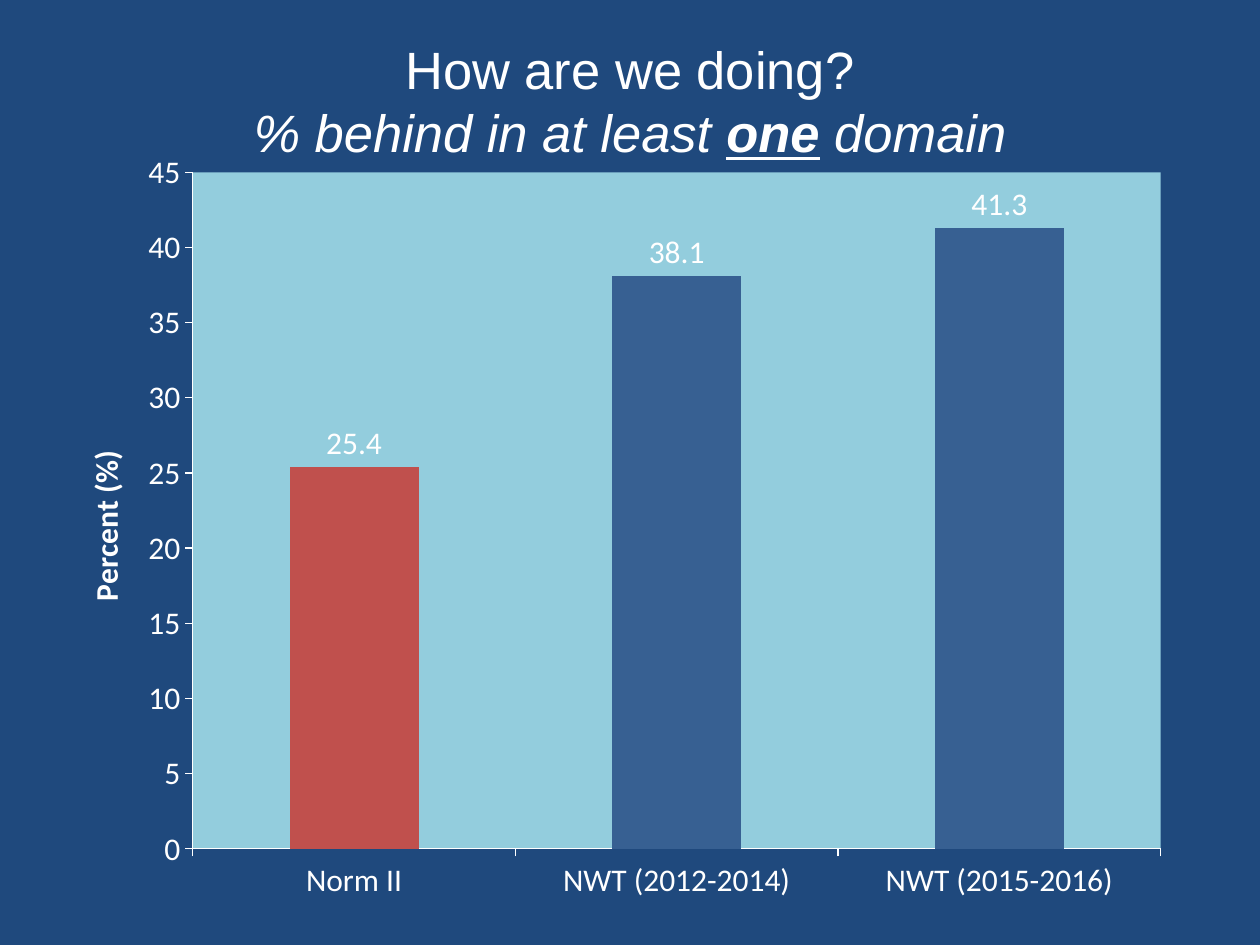
from lxml.etree import SubElement
from pptx import Presentation
from pptx.chart.data import CategoryChartData
from pptx.dml.color import RGBColor
from pptx.enum.chart import XL_CHART_TYPE, XL_LABEL_POSITION, XL_TICK_MARK
from pptx.enum.text import MSO_ANCHOR, MSO_AUTO_SIZE, PP_ALIGN
from pptx.oxml import parse_xml
from pptx.oxml.ns import nsdecls, qn
from pptx.util import Pt

NAVY = RGBColor(0x1F, 0x49, 0x7D)
WHITE = RGBColor(0xFF, 0xFF, 0xFF)
LIGHT_BLUE = RGBColor(0x93, 0xCD, 0xDD)
BLUE = RGBColor(0x4F, 0x81, 0xBD)
DARK_BLUE = RGBColor(0x37, 0x60, 0x92)
RED = RGBColor(0xC0, 0x50, 0x4D)


def apply(target, values):
    for name, value in values.items():
        setattr(target, name, value)


class SlideBuilder:
    """Holds the text style and the current slide."""

    title_font = {"name": "Arial", "size": Pt(30), "bold": False}
    chart_font = {"name": "Calibri", "size": Pt(18)}
    text_color = WHITE

    def __init__(self, presentation, background):
        self.slide = presentation.slides.add_slide(presentation.slide_layouts[5])
        fill = self.slide.background.fill
        fill.solid()
        fill.fore_color.rgb = background

    def style_font(self, font, values):
        apply(font, values)
        font.color.rgb = self.text_color

    def title(self, box, lines):
        shape = self.slide.shapes.title
        apply(shape, dict(zip(("left", "top", "width", "height"), map(Pt, box))))
        frame = shape.text_frame
        apply(frame, {"word_wrap": True, "auto_size": MSO_AUTO_SIZE.NONE,
                      "vertical_anchor": MSO_ANCHOR.MIDDLE})
        paragraph = frame.paragraphs[0]
        paragraph.alignment = PP_ALIGN.CENTER
        for index, line in enumerate(lines):
            if index:
                paragraph.add_line_break()
            for text, values in line:
                run = paragraph.add_run()
                run.text = text
                self.style_font(run.font, {**self.title_font, **values})

    def column_chart(self, box, values, colors, axis_title, plot_box):
        data = CategoryChartData()
        data.categories = list(values)
        data.add_series("Series 1", list(values.values()))
        frame = self.slide.shapes.add_chart(
            XL_CHART_TYPE.COLUMN_CLUSTERED, *map(Pt, box), data)
        chart = frame.chart
        apply(chart, {"has_legend": False, "has_title": False})
        self.style_font(chart.font, self.chart_font)

        # Columns and their labels
        plot = chart.plots[0]
        apply(plot, {"gap_width": 150, "vary_by_categories": False,
                     "has_data_labels": True})
        apply(plot.data_labels, {"show_value": True,
                                 "position": XL_LABEL_POSITION.OUTSIDE_END})
        self.style_font(plot.data_labels.font, self.chart_font)
        series = plot.series[0]
        fills = [series.format.fill]
        fills += [series.points[i].format.fill for i in range(len(colors))]
        for fill, color in zip(fills, [BLUE, *colors]):
            fill.solid()
            fill.fore_color.rgb = color

        # Axes
        for axis in (chart.category_axis, chart.value_axis):
            apply(axis, {"major_tick_mark": XL_TICK_MARK.OUTSIDE,
                         "minor_tick_mark": XL_TICK_MARK.NONE,
                         "has_major_gridlines": False})
            axis.format.line.color.rgb = self.text_color
            axis.format.line.width = Pt(0.75)
            self.style_font(axis.tick_labels.font, self.chart_font)
        apply(chart.value_axis, {"minimum_scale": 0, "maximum_scale": 45,
                                 "major_unit": 5})
        paragraph = chart.value_axis.axis_title.text_frame.paragraphs[0]
        run = paragraph.add_run()
        run.text = axis_title
        self.style_font(run.font, {**self.chart_font, "bold": True})
        self.plot_area(chart, plot_box, LIGHT_BLUE)

        # The title lies in front of the chart
        frame.element.addnext(self.slide.shapes.title.element)

    def plot_area(self, chart, plot_box, color):
        area = chart.element.find(".//" + qn("c:plotArea"))
        for old_layout in area.findall(qn("c:layout")):
            area.remove(old_layout)
        layout = parse_xml(f"<c:layout {nsdecls('c')}><c:manualLayout/></c:layout>")
        settings = {"layoutTarget": "inner", "xMode": "edge", "yMode": "edge",
                    **dict(zip("xywh", plot_box))}
        for tag, value in settings.items():
            SubElement(layout[0], qn("c:" + tag)).set("val", str(value))
        area.insert(0, layout)
        area.append(parse_xml(
            f"<c:spPr {nsdecls('c', 'a')}><a:solidFill><a:srgbClr val='{color}'/>"
            "</a:solidFill><a:ln><a:noFill/></a:ln></c:spPr>"))


def main():
    presentation = Presentation()
    apply(presentation, {"slide_width": Pt(720), "slide_height": Pt(540)})
    builder = SlideBuilder(presentation, NAVY)

    # Title
    italic = {"italic": True}
    builder.title((36, 12.24, 648, 90), [
        [("How are we doing?", {})],
        [("% behind in at least ", italic),
         ("one", {**italic, "bold": True, "underline": True}),
         (" domain", italic)],
    ])

    # Percentage chart
    builder.column_chart(
        (44.64, 84.24, 630, 432),
        {"Norm II": 25.4, "NWT (2012-2014)": 38.1, "NWT (2015-2016)": 41.3},
        [RED, DARK_BLUE, DARK_BLUE], "Percent (%)", (0.104, 0.033, 0.878, 0.895))
    presentation.save("out.pptx")


if __name__ == "__main__":
    main()
